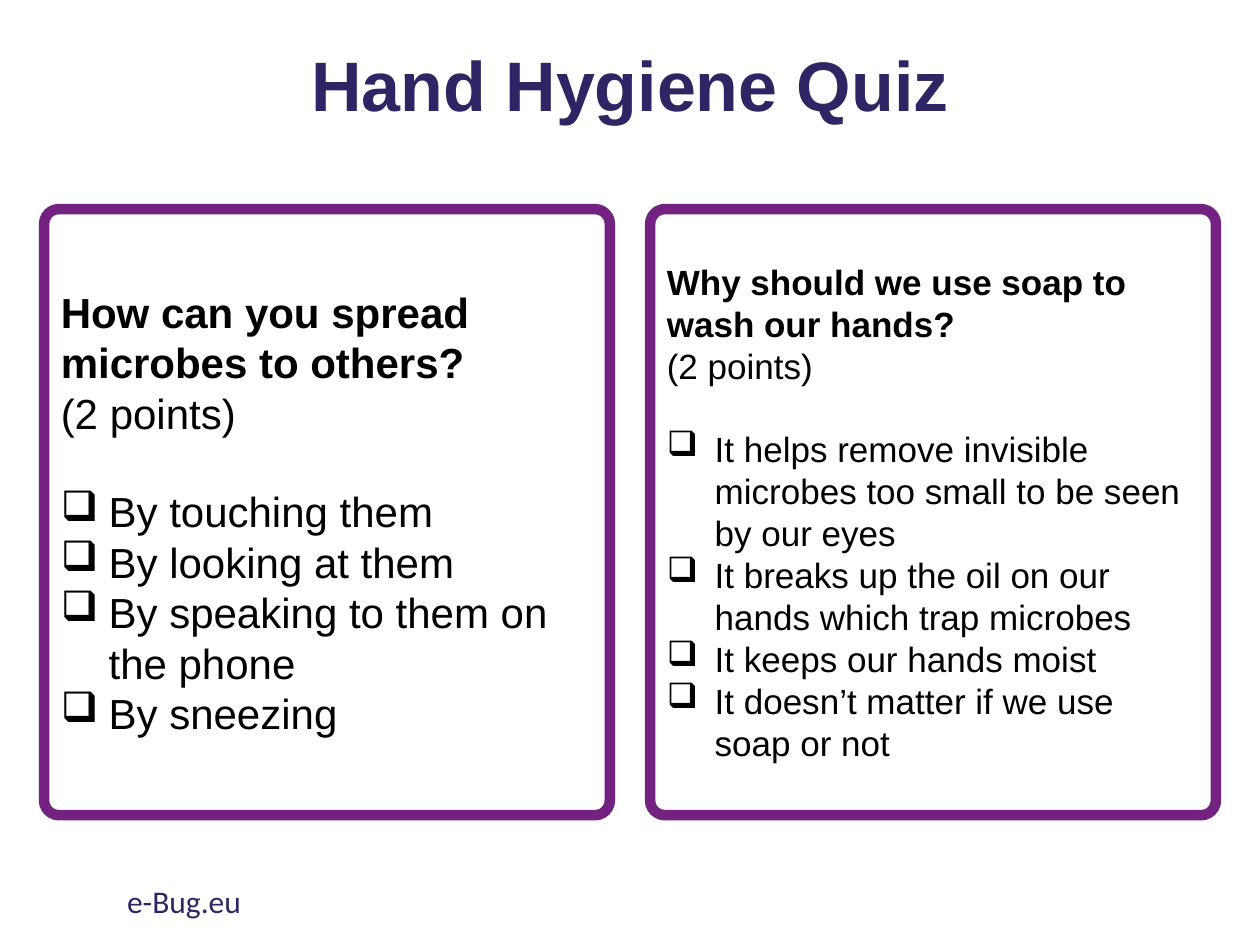
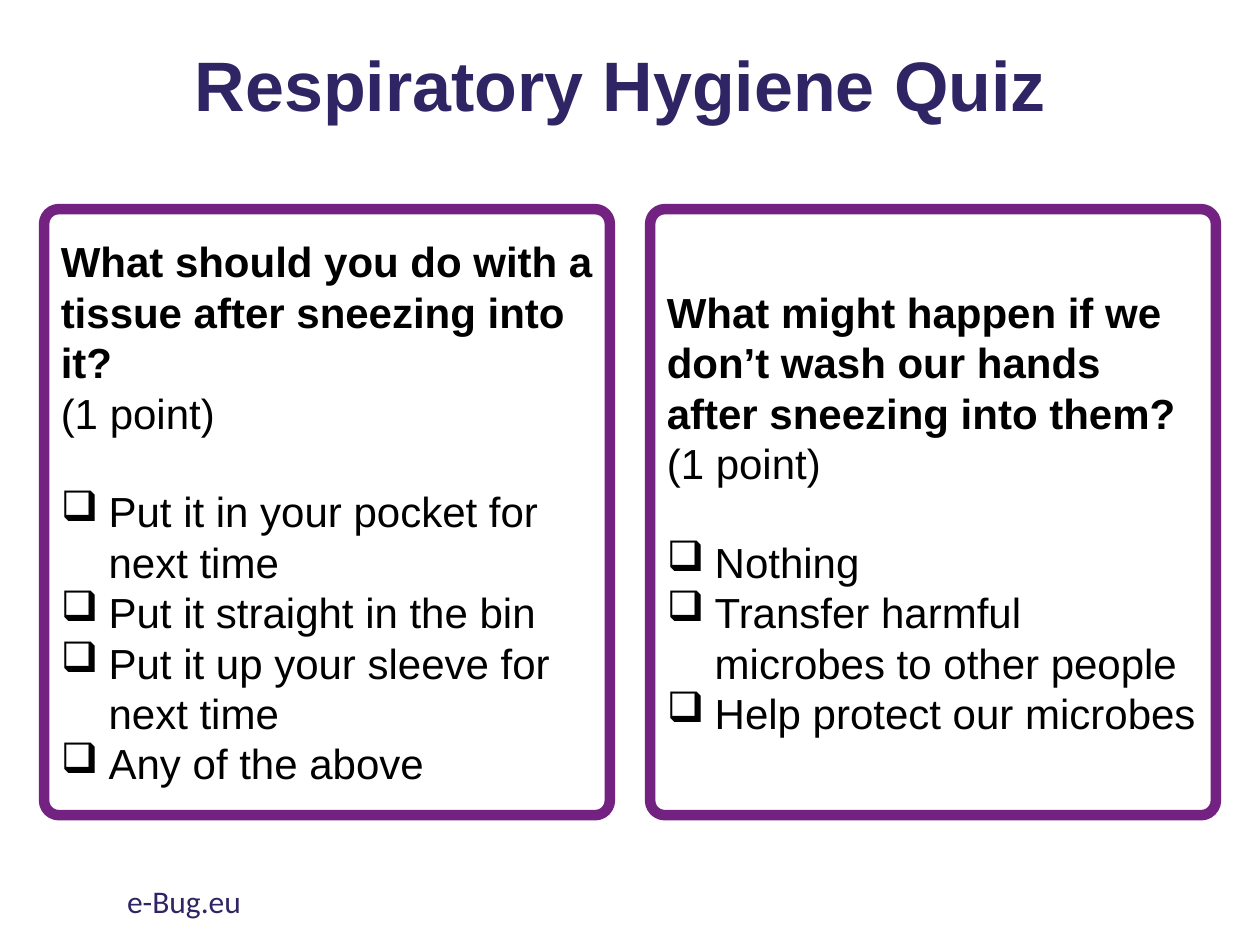
"""Build two hygiene quiz slides, each with a pair of question cards."""
from lxml import etree
from pptx import Presentation
from pptx import util as u
from pptx.dml.color import RGBColor
from pptx.enum import shapes, text
from pptx.oxml.ns import qn

COLOURS = {"heading": "302564", "border": "732281", "body": "000000", "background": "FFFFFF"}
CARD_LEFT, CARD_TOP, CARD_WIDTH, CARD_HEIGHT = 0.35, 1.66, 4.49, 4.81
CARD_STEP = 4.81
ANSWER_INDENT, ANSWER_TAB = 0.38, 0.5
LINE_HEIGHT = 1.15

QUIZZES = [
    ("Hand Hygiene Quiz", [
        ("How can you spread microbes to others?", "(2 points)", 24, [
            "By touching them",
            "By looking at them",
            "By speaking to them on the phone",
            "By sneezing",
        ]),
        ("Why should we use soap to wash our hands?", "(2 points)", 20, [
            "It helps remove invisible microbes too small to be seen by our eyes",
            "It breaks up the oil on our hands which trap microbes",
            "It keeps our hands moist",
            "It doesn’t matter if we use soap or not",
        ]),
    ]),
    ("Respiratory Hygiene Quiz ", [
        ("What should you do with a tissue after sneezing into it?", "(1 point)", 24, [
            "Put it in your pocket for next time",
            "Put it straight in the bin",
            "Put it up your sleeve for next time",
            "Any of the above",
        ]),
        ("What might happen if we don’t wash our hands after sneezing into them?", "(1 point)", 24, [
            "Nothing",
            "Transfer harmful microbes to other people",
            "Help protect our microbes",
        ]),
    ]),
]


def colour(name):
    return RGBColor.from_string(COLOURS[name])


def style(paragraph, size, colour_name, bold=False, face="Arial"):
    for run in paragraph.runs:
        run.font.name = face
        run.font.size = u.Pt(size)
        run.font.bold = bold
        run.font.color.rgb = colour(colour_name)


def add_checkbox(paragraph):
    properties = paragraph._p.get_or_add_pPr()
    indent = u.Inches(ANSWER_INDENT)
    properties.set("marL", str(indent))
    properties.set("indent", str(-indent))
    etree.SubElement(properties, qn("a:buChar"), char="❑")
    tabs = etree.SubElement(properties, qn("a:tabLst"))
    etree.SubElement(tabs, qn("a:tab"), pos=str(u.Inches(ANSWER_TAB)), algn="l")


def set_title(slide, wording):
    title = slide.shapes.title
    title.left, title.top = u.Inches(0.69), u.Inches(0.25)
    title.width, title.height = u.Inches(8.62), u.Inches(0.91)
    frame = title.text_frame
    frame.text = wording
    frame.auto_size = text.MSO_AUTO_SIZE.NONE
    frame.vertical_anchor = text.MSO_ANCHOR.MIDDLE
    heading = frame.paragraphs[0]
    heading.alignment = text.PP_ALIGN.CENTER
    heading.line_spacing = 0.9
    style(heading, 40, "heading", bold=True)


def add_card(slide, column, question, points, size, answers):
    card = slide.shapes.add_shape(
        shapes.MSO_SHAPE.ROUNDED_RECTANGLE,
        u.Inches(CARD_LEFT + column * CARD_STEP), u.Inches(CARD_TOP),
        u.Inches(CARD_WIDTH), u.Inches(CARD_HEIGHT))
    card.adjustments[0] = 0.026
    card.shadow.inherit = False
    card.fill.background()
    card.line.color.rgb = colour("border")
    card.line.width = u.Pt(6)

    frame = card.text_frame
    frame.word_wrap = True
    frame.vertical_anchor = text.MSO_ANCHOR.MIDDLE
    frame.text = "\n".join([question, points, *answers])
    for row, paragraph in enumerate(frame.paragraphs):
        paragraph.alignment = text.PP_ALIGN.LEFT
        if row >= 2:
            add_checkbox(paragraph)
        if row == 2:
            paragraph.space_before = u.Pt(size * LINE_HEIGHT)
        style(paragraph, size, "body", bold=row == 0)


def add_footer(slide):
    footer = slide.shapes.add_textbox(
        u.Inches(0.91), u.Inches(6.95), u.Inches(3.38), u.Inches(0.4))
    frame = footer.text_frame
    frame.word_wrap = True
    frame.text = "e-Bug.eu"
    style(frame.paragraphs[0], 18, "heading", face="Calibri")


def add_quiz(deck, title, cards):
    slide = deck.slides.add_slide(deck.slide_layouts.get_by_name("Title Only"))
    slide.background.fill.solid()
    slide.background.fill.fore_color.rgb = colour("background")
    set_title(slide, title)
    for column, card in enumerate(cards):
        add_card(slide, column, *card)
    add_footer(slide)


def main():
    deck = Presentation()
    deck.slide_width, deck.slide_height = u.Inches(10), u.Inches(7.5)
    for title, cards in QUIZZES:
        add_quiz(deck, title, cards)
    deck.save("out.pptx")


if __name__ == "__main__":
    main()
